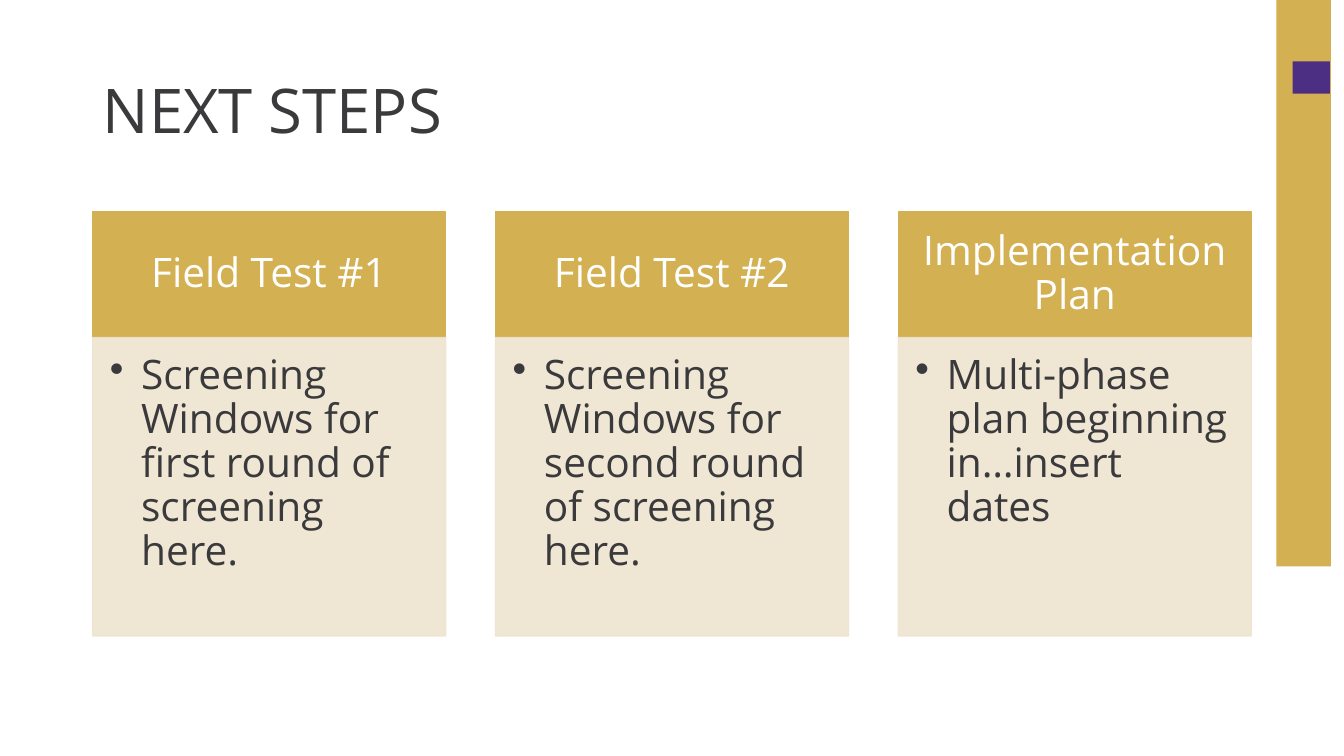
from dataclasses import dataclass

from lxml import etree
from pptx import Presentation
from pptx.dml.color import RGBColor
from pptx.enum.shapes import MSO_SHAPE
from pptx.enum.text import MSO_ANCHOR, PP_ALIGN
from pptx.oxml.ns import qn
from pptx.shapes.autoshape import Shape
from pptx.slide import Slide
from pptx.text.text import TextFrame, _Paragraph
from pptx.util import Inches, Pt

RECTANGLE = MSO_SHAPE.RECTANGLE
MIDDLE, TOP = MSO_ANCHOR.MIDDLE, MSO_ANCHOR.TOP
CENTER, LEFT = PP_ALIGN.CENTER, PP_ALIGN.LEFT


@dataclass(frozen=True)
class Theme:
    font: str = "Open Sans"
    title_size: int = 44
    body_size: int = 29
    gold: RGBColor = RGBColor(0xD3, 0xB0, 0x51)
    purple: RGBColor = RGBColor(0x4C, 0x2F, 0x83)
    cream: RGBColor = RGBColor(0xEF, 0xE4, 0xD0)
    ink: RGBColor = RGBColor(0x3A, 0x3A, 0x3C)
    white: RGBColor = RGBColor(0xFF, 0xFF, 0xFF)
    cream_opacity: int = 90


@dataclass(frozen=True)
class Box:
    left: float
    top: float
    width: float
    height: float

    def lengths(self) -> list[int]:
        return [Inches(n) for n in (self.left, self.top, self.width, self.height)]


@dataclass(frozen=True)
class Step:
    heading: str
    detail: str


THEME = Theme()
CONTENT_LEFT, CONTENT_WIDTH = 0.92, 11.49
STEP_WIDTH = 3.5
HEADING_TOP, HEADING_HEIGHT, DETAIL_HEIGHT = 2.1, 1.25, 2.96
BULLET_INDENT = 0.31
STEPS = [
    Step("Field Test #1", "Screening Windows for first round of screening here."),
    Step("Field Test #2", "Screening Windows for second round of screening here."),
    Step("Implementation Plan", "Multi-phase plan beginning in…insert dates"),
]


def add_block(slide: Slide, box: Box, color: RGBColor, outlined: bool = False) -> Shape:
    block = slide.shapes.add_shape(RECTANGLE, *box.lengths())
    block.shadow.inherit = False
    block.fill.solid()
    block.fill.fore_color.rgb = color
    if outlined:
        block.line.color.rgb = color
        block.line.width = Pt(1)
    else:
        block.line.fill.background()
    return block


def set_opacity(block: Shape, percent: int) -> None:
    for color in block._element.spPr.iter(qn("a:srgbClr")):
        etree.SubElement(color, qn("a:alpha"), val=str(percent * 1000))


def set_frame(frame: TextFrame, anchor: MSO_ANCHOR, insets: tuple[float, ...]) -> None:
    frame.word_wrap = True
    frame.vertical_anchor = anchor
    frame.margin_left, frame.margin_top, frame.margin_right, frame.margin_bottom = (
        Inches(inset) for inset in insets
    )


def add_bullet(paragraph: _Paragraph) -> None:
    paragraph.level = 1
    properties = paragraph._p.get_or_add_pPr()
    properties.set("marL", str(Inches(BULLET_INDENT)))
    properties.set("indent", str(-Inches(BULLET_INDENT)))
    etree.SubElement(properties, qn("a:buChar"), char="•")


def write(paragraph: _Paragraph, text: str, size: int, color: RGBColor, align: PP_ALIGN) -> None:
    paragraph.alignment = align
    paragraph.line_spacing = 0.9
    run = paragraph.add_run()
    run.text = text
    run.font.name = THEME.font
    run.font.size = Pt(size)
    run.font.color.rgb = color


def add_step(slide: Slide, step: Step, left: float) -> None:
    heading_box = Box(left, HEADING_TOP, STEP_WIDTH, HEADING_HEIGHT)
    heading = add_block(slide, heading_box, THEME.gold, outlined=True).text_frame
    set_frame(heading, MIDDLE, (0.23, 0.13, 0.23, 0.13))
    write(heading.paragraphs[0], step.heading, THEME.body_size, THEME.white, CENTER)

    detail_box = Box(left, HEADING_TOP + HEADING_HEIGHT, STEP_WIDTH, DETAIL_HEIGHT)
    panel = add_block(slide, detail_box, THEME.cream, outlined=True)
    set_opacity(panel, THEME.cream_opacity)
    detail = panel.text_frame
    set_frame(detail, TOP, (0.17, 0.17, 0.23, 0.25))
    add_bullet(detail.paragraphs[0])
    write(detail.paragraphs[0], step.detail, THEME.body_size, THEME.ink, LEFT)


def add_title(slide: Slide, text: str) -> None:
    title_box = Box(CONTENT_LEFT, 0.4, CONTENT_WIDTH, 1.45)
    title = slide.shapes.add_textbox(*title_box.lengths()).text_frame
    set_frame(title, MIDDLE, (0.1, 0.05, 0.1, 0.05))
    write(title.paragraphs[0], text, THEME.title_size, THEME.ink, LEFT)


def main() -> None:
    deck = Presentation()
    deck.slide_width, deck.slide_height = Inches(13.33), Inches(7.5)
    slide = deck.slides.add_slide(deck.slide_layouts[6])

    add_block(slide, Box(12.66, 0, 0.54, 5.62), THEME.gold)
    add_block(slide, Box(12.82, 0.61, 0.37, 0.32), THEME.purple)

    step_pitch = (CONTENT_WIDTH - STEP_WIDTH) / (len(STEPS) - 1)
    for position, step in enumerate(STEPS):
        add_step(slide, step, CONTENT_LEFT + position * step_pitch)
    add_title(slide, "NEXT STEPS")

    deck.save("out.pptx")


if __name__ == "__main__":
    main()
